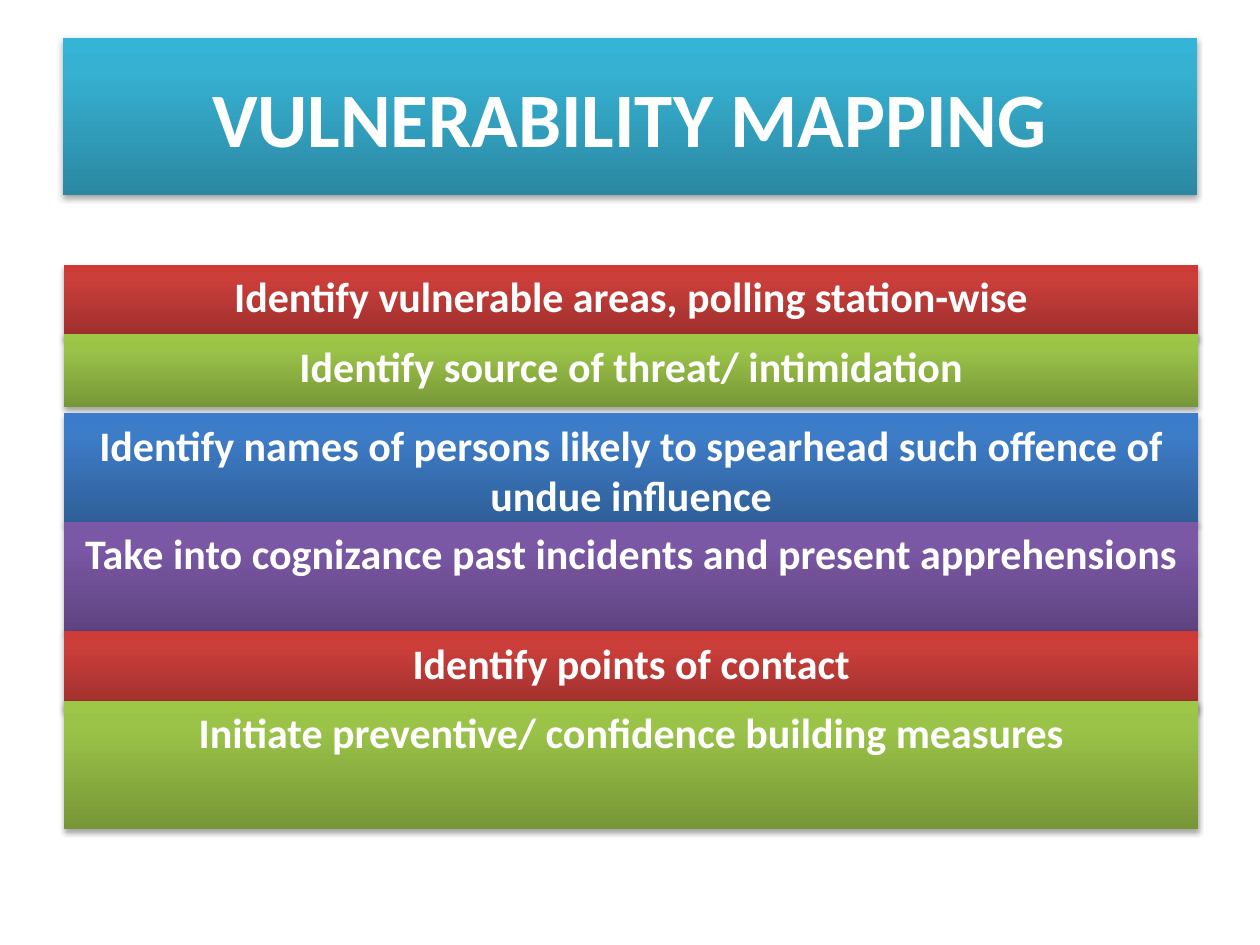
from dataclasses import dataclass

from lxml import etree
from pptx import Presentation
from pptx.dml.color import RGBColor
from pptx.enum.shapes import MSO_SHAPE
from pptx.enum.text import MSO_ANCHOR, PP_ALIGN
from pptx.oxml.ns import qn
from pptx.util import Inches, Pt

RECT = MSO_SHAPE.RECTANGLE
CENTER = PP_ALIGN.CENTER
TOP, MIDDLE = MSO_ANCHOR.TOP, MSO_ANCHOR.MIDDLE

COLORS = {"white": "FFFFFF", "shadow": "000000"}
FADES = {
    "aqua": ("2A88A2", "37B1D2", "34B4D6"),
    "red": ("9C2F2D", "CB3E3A", "CE3B37"),
    "green": ("779737", "9BC348", "9DC746"),
    "blue": ("2F5F99", "3D7CC7", "3A7CCB"),
    "purple": ("5F4480", "7B58A6", "7C57A8"),
}
STOPS = (0, 80, 100)
LEFT, WIDTH = 0.51, 9


@dataclass
class Bar:
    top: float
    height: float
    fade: str
    text: str


BARS = [
    Bar(2.1, 0.58, "red", "Identify vulnerable areas, polling station-wise"),
    Bar(2.65, 0.58, "green", "Identify source of threat/ intimidation"),
    Bar(3.28, 0.87, "blue",
        "Identify names of persons likely to spearhead such offence of undue influence"),
    Bar(4.14, 0.87, "purple",
        "Take into cognizance past incidents and present apprehensions"),
    Bar(5.01, 0.63, "red", "Identify points of contact"),
    Bar(5.56, 1.02, "green", "Initiate preventive/ confidence building measures"),
]


def add_node(parent, tag: str, **attrs):
    return etree.SubElement(parent, qn(tag), attrs)


def set_fade(shape, fade: str) -> None:
    shape.fill.gradient()
    shape.fill.gradient_angle = 90
    stops = shape.element.spPr.find(".//" + qn("a:gsLst"))
    for old in list(stops):
        stops.remove(old)
    for place, color in zip(STOPS, FADES[fade]):
        stop = add_node(stops, "a:gs", pos=str(place * 1000))
        add_node(stop, "a:srgbClr", val=color)


def set_shadow(shape) -> None:
    shape.shadow.inherit = False
    effects = shape.element.spPr.find(qn("a:effectLst"))
    shadow = add_node(effects, "a:outerShdw", blurRad=str(Pt(3.1)),
                      dist=str(Pt(1.8)), dir="5400000", rotWithShape="0")
    color = add_node(shadow, "a:srgbClr", val=COLORS["shadow"])
    add_node(color, "a:alpha", val="35000")


def style(shape, fade: str, text: str, size: int, anchor) -> None:
    set_fade(shape, fade)
    shape.line.fill.background()
    set_shadow(shape)
    frame = shape.text_frame
    frame.text = text
    frame.word_wrap = True
    frame.vertical_anchor = anchor
    para = frame.paragraphs[0]
    para.alignment = CENTER
    para.font.name = "Calibri"
    para.font.size = Pt(size)
    para.font.bold = True
    para.font.color.rgb = RGBColor.from_string(COLORS["white"])


def draw_title(slide, text: str) -> None:
    title = slide.shapes.title
    title.left, title.top = Inches(0.5), Inches(0.3)
    title.width, title.height = Inches(WIDTH), Inches(1.25)
    style(title, "aqua", text, 44, MIDDLE)


def draw_bar(slide, bar: Bar) -> None:
    shape = slide.shapes.add_shape(
        RECT, Inches(LEFT), Inches(bar.top), Inches(WIDTH), Inches(bar.height))
    style(shape, bar.fade, bar.text, 24, TOP)


def main() -> None:
    deck = Presentation()
    deck.slide_width, deck.slide_height = Inches(10), Inches(7.5)
    slide = deck.slides.add_slide(deck.slide_layouts[5])
    draw_title(slide, "VULNERABILITY MAPPING")
    for bar in BARS:
        draw_bar(slide, bar)
    deck.save("out.pptx")


if __name__ == "__main__":
    main()
